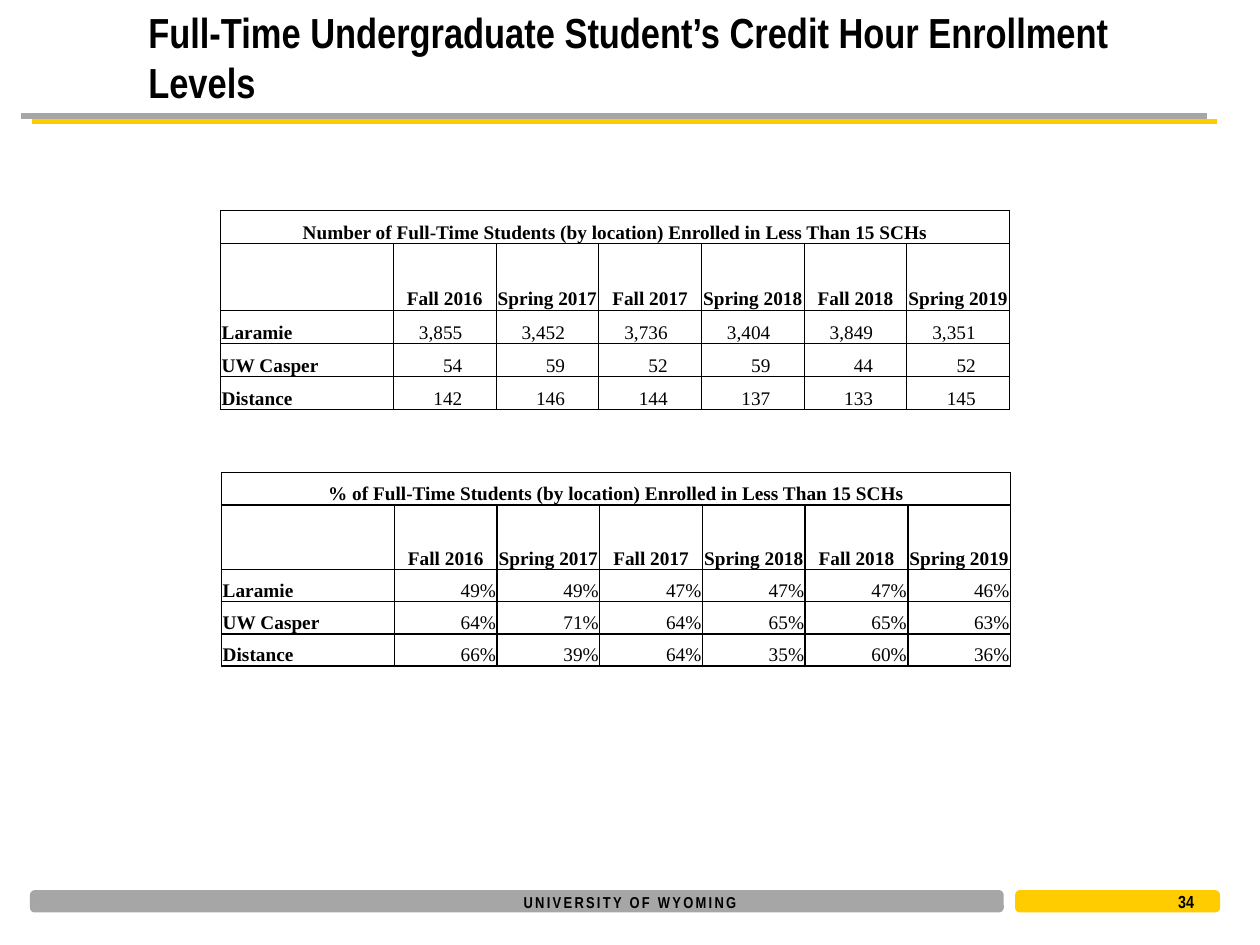
from lxml import etree
from pptx import Presentation
from pptx.dml.color import RGBColor
from pptx.enum.shapes import MSO_CONNECTOR, MSO_SHAPE
from pptx.enum.text import MSO_ANCHOR, PP_ALIGN
from pptx.oxml import parse_xml
from pptx.oxml.ns import nsdecls, qn
from pptx.util import Cm, Pt

BLACK = RGBColor(0x00, 0x00, 0x00)
GRAY = RGBColor(0xA6, 0xA6, 0xA6)
GOLD = RGBColor(0xFF, 0xCC, 0x00)
LEFT, CENTER, RIGHT = PP_ALIGN.LEFT, PP_ALIGN.CENTER, PP_ALIGN.RIGHT
MIDDLE, BOTTOM = MSO_ANCHOR.MIDDLE, MSO_ANCHOR.BOTTOM
STRAIGHT, ROUNDED = MSO_CONNECTOR.STRAIGHT, MSO_SHAPE.ROUNDED_RECTANGLE
HEADING_FONT, TABLE_FONT = "Arial Narrow", "Times New Roman"

LABEL_WIDTH, TERM_WIDTH, CELL_INSET = 3.48, 2.07, 0.02
TERMS = ["Fall 2016", "Spring 2017", "Fall 2017",
         "Spring 2018", "Fall 2018", "Spring 2019"]
COUNTS = [
    ["Laramie", "3,855", "3,452", "3,736", "3,404", "3,849", "3,351"],
    ["UW Casper", "54", "59", "52", "59", "44", "52"],
    ["Distance", "142", "146", "144", "137", "133", "145"],
]
SHARES = [
    ["Laramie", "49%", "49%", "47%", "47%", "47%", "46%"],
    ["UW Casper", "64%", "71%", "64%", "65%", "65%", "63%"],
    ["Distance", "66%", "39%", "64%", "35%", "60%", "36%"],
]


def style_text(frame, text, font_name, size, bold=True, align=LEFT):
    """Fill a text frame with one formatted paragraph."""
    frame.text = text
    paragraph = frame.paragraphs[0]
    paragraph.alignment = align
    font = paragraph.font
    for run in paragraph.runs:
        font = run.font
    font.name, font.size, font.bold = font_name, Pt(size), bold
    font.color.rgb = BLACK


def add_heading(slide, box, text, size, align=LEFT, spacing=0):
    """Add a bold text box in the heading font."""
    frame = slide.shapes.add_textbox(*map(Cm, box)).text_frame
    frame.word_wrap = True
    frame.vertical_anchor = MIDDLE
    style_text(frame, text, HEADING_FONT, size, align=align)
    if spacing:
        properties = frame.paragraphs[0].runs[0].font._element
        properties.set("spc", str(spacing))


def add_title_rule(slide):
    """Draw the gray rule with its offset gold shadow."""
    rule = slide.shapes.add_connector(
        STRAIGHT, Cm(0.43), Cm(2.34), Cm(24.33), Cm(2.34))
    rule.line.color.rgb = GRAY
    rule.line.width = Pt(3)
    rule._element.spPr.append(parse_xml(
        f'<a:effectLst {nsdecls("a")}>'
        f'<a:outerShdw dist="{Pt(6.7)}" dir="{27 * 60000}" algn="ctr" rotWithShape="0">'
        f'<a:srgbClr val="{GOLD}"/></a:outerShdw></a:effectLst>'))


def add_footer_bar(slide, left, width, color):
    """Draw one rounded bar of the footer."""
    bar = slide.shapes.add_shape(ROUNDED, Cm(left), Cm(17.98), Cm(width), Cm(0.38))
    bar.shadow.inherit = False
    bar.fill.solid()
    bar.fill.fore_color.rgb = color
    bar.line.color.rgb = color
    bar.line.width = Pt(2)


def set_borders(cell, width):
    """Give a cell a solid black border on all four sides."""
    properties = cell._tc.get_or_add_tcPr()
    for side in ("lnL", "lnR", "lnT", "lnB"):
        border = etree.SubElement(properties, qn(f"a:{side}"), w=str(Pt(width)))
        fill = etree.SubElement(border, qn("a:solidFill"))
        etree.SubElement(fill, qn("a:srgbClr"), val=str(BLACK))


def add_enrollment_table(slide, left, top, row_height, caption, records,
                         border_width, value_inset=CELL_INSET):
    """Add a captioned table of enrollment by location and term."""
    rows = [[caption] + [""] * len(TERMS), [""] + TERMS] + records
    heights = [row_height * (2 if i == 1 else 1) for i in range(len(rows))]
    widths = [LABEL_WIDTH] + [TERM_WIDTH] * len(TERMS)
    table = slide.shapes.add_table(
        len(rows), len(widths), Cm(left), Cm(top),
        Cm(sum(widths)), Cm(sum(heights))).table
    for column, width in zip(table.columns, widths):
        column.width = Cm(width)
    for row, height in zip(table.rows, heights):
        row.height = Cm(height)
    for r, texts in enumerate(rows):
        for c, text in enumerate(texts):
            cell = table.cell(r, c)
            is_value = r > 1 and c > 0
            align = CENTER if r < 2 else RIGHT if is_value else LEFT
            style_text(cell.text_frame, text, TABLE_FONT, 11, not is_value, align)
            cell.vertical_anchor = BOTTOM
            cell.margin_left = cell.margin_top = Cm(CELL_INSET)
            cell.margin_right = Cm(value_inset if is_value else CELL_INSET)
            cell.margin_bottom = 0
            set_borders(cell, border_width)
            cell.fill.background()
    table.cell(0, 0).merge(table.cell(0, len(TERMS)))


def main():
    """Build and save the enrollment slide."""
    deck = Presentation()
    deck.slide_width, deck.slide_height = Cm(25.4), Cm(19.05)
    slide = deck.slides.add_slide(deck.slide_layouts[6])
    add_title_rule(slide)
    add_footer_bar(slide, 0.64, 19.56, GRAY)
    add_footer_bar(slide, 20.5, 4.06, GOLD)
    add_heading(slide, (9.7, 17.86, 6, 0.64), "UNIVERSITY OF WYOMING",
                9, align=CENTER, spacing=130)
    add_heading(slide, (2.74, 0.38, 21.9, 1.52),
                "Full-Time Undergraduate Student’s Credit Hour Enrollment Levels", 24)
    add_heading(slide, (23.5, 17.93, 1.27, 0.48), "34", 10)
    add_enrollment_table(
        slide, 4.45, 4.24, 0.67,
        "Number of Full-Time Students (by location) Enrolled in Less Than 15 SCHs",
        COUNTS, 0.5, value_inset=0.68)
    add_enrollment_table(
        slide, 4.47, 9.53, 0.65,
        "% of Full-Time Students (by location) Enrolled in Less Than 15 SCHs",
        SHARES, 1)
    deck.save("out.pptx")


if __name__ == "__main__":
    main()
